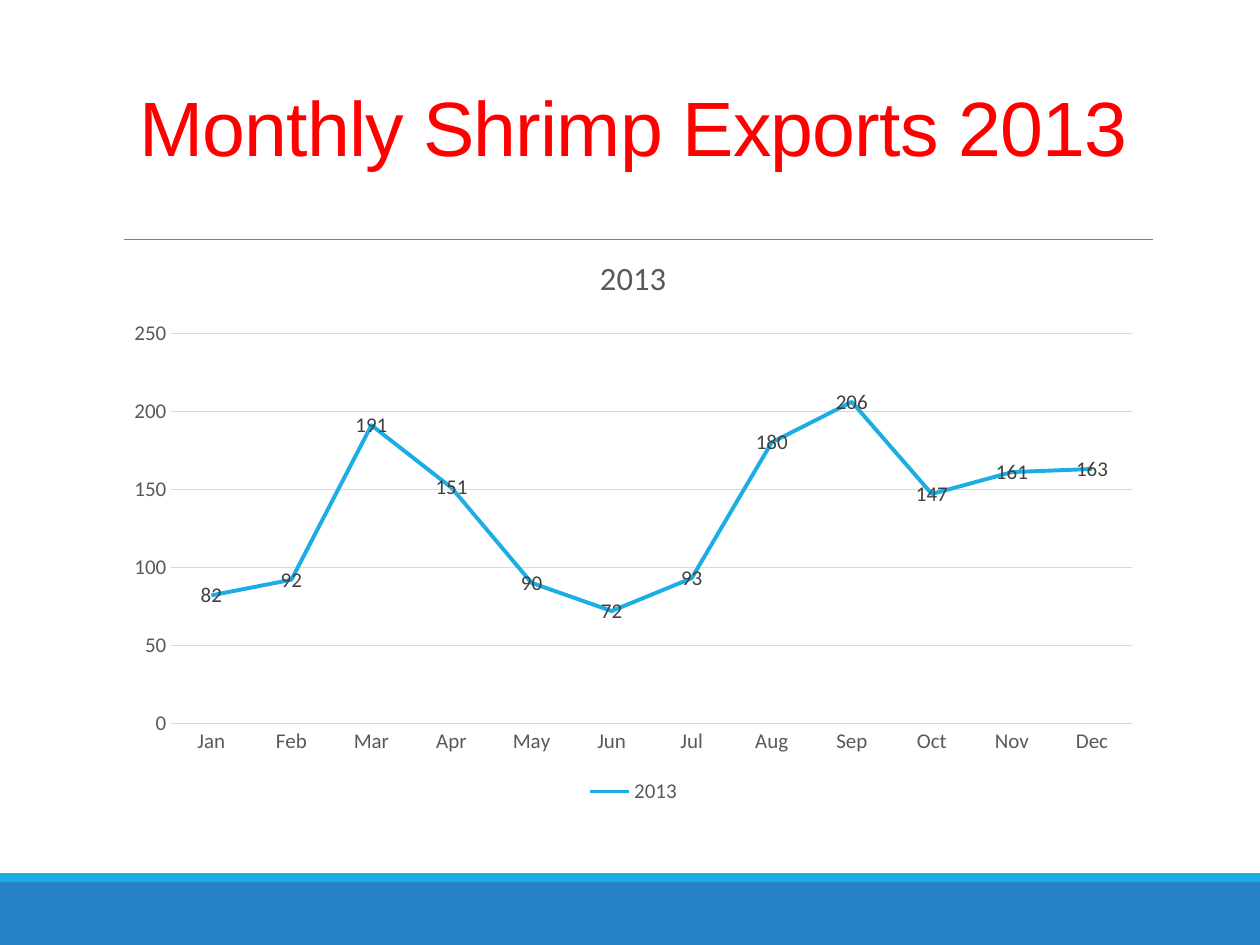
from pptx import Presentation
from pptx.chart.data import CategoryChartData
from pptx.dml.color import RGBColor
from pptx.enum.chart import (XL_CHART_TYPE, XL_LABEL_POSITION, XL_LEGEND_POSITION,
                             XL_MARKER_STYLE, XL_TICK_MARK)
from pptx.enum.shapes import MSO_CONNECTOR, MSO_SHAPE
from pptx.enum.text import MSO_ANCHOR, PP_ALIGN
from pptx.oxml.xmlchemy import OxmlElement
from pptx.util import Cm, Pt

LINE_CHART = XL_CHART_TYPE.LINE
LABEL_CENTER = XL_LABEL_POSITION.CENTER
LEGEND_BOTTOM = XL_LEGEND_POSITION.BOTTOM
NO_MARKER = XL_MARKER_STYLE.NONE
NO_TICK = XL_TICK_MARK.NONE
STRAIGHT = MSO_CONNECTOR.STRAIGHT
RECTANGLE = MSO_SHAPE.RECTANGLE
BOTTOM = MSO_ANCHOR.BOTTOM
CENTER = PP_ALIGN.CENTER

COLORS = {
    "band": "2683C6",
    "accent": "1CADE4",
    "rule": "808080",
    "title": "FF0000",
    "axis_text": "595959",
    "label_text": "404040",
    "grid": "D9D9D9",
}
MONTHS = ["Jan", "Feb", "Mar", "Apr", "May", "Jun",
          "Jul", "Aug", "Sep", "Oct", "Nov", "Dec"]
EXPORTS = [82, 92, 191, 151, 90, 72, 93, 180, 206, 147, 161, 163]


def color(key):
    return RGBColor.from_string(COLORS[key])


def style_font(font, size, key, name="Calibri"):
    font.size = Pt(size)
    font.name = name
    font.bold = False
    font.color.rgb = color(key)


def style_line(line, key, width):
    line.color.rgb = color(key)
    line.width = Pt(width)


def add_footer(slide, left, top, width, height):
    stripe_height = Cm(0.18)
    bands = [("accent", top, stripe_height),
             ("band", top + stripe_height, height - stripe_height)]
    for key, band_top, band_height in bands:
        band = slide.shapes.add_shape(RECTANGLE, left, band_top, width, band_height)
        band.shadow.inherit = False
        band.fill.solid()
        band.fill.fore_color.rgb = color(key)
        band.line.fill.background()


def add_heading(slide, left, top, width, height):
    rule_left, rule_top = left + Cm(0.2), top + height - Cm(0.31)
    rule = slide.shapes.add_connector(STRAIGHT, rule_left, rule_top,
                                      left + width, rule_top)
    style_line(rule.line, "rule", 0.5)
    rule._element.spPr.append(OxmlElement("a:effectLst"))

    heading = slide.shapes.add_textbox(left, top, width, height).text_frame
    heading.word_wrap = True
    heading.vertical_anchor = BOTTOM
    heading.margin_bottom = Cm(1.65)
    paragraph = heading.paragraphs[0]
    paragraph.alignment = CENTER
    paragraph.line_spacing = 0.85
    style_font(paragraph.font, 44, "title", "Arial")
    run = paragraph.add_run()
    run.text = "Monthly Shrimp Exports 2013"
    run._r.get_or_add_rPr().set("spc", "-50")


def add_exports_chart(slide, left, top, width, height):
    data = CategoryChartData()
    data.categories = MONTHS
    data.add_series("2013", EXPORTS)
    chart = slide.shapes.add_chart(LINE_CHART, left, top, width, height, data).chart
    style_font(chart.font, 12, "axis_text")

    chart.has_title = True
    chart_title = chart.chart_title.text_frame
    chart_title.text = "2013"
    style_font(chart_title.paragraphs[0].font, 18.6, "axis_text")
    chart.chart_title.include_in_layout = False

    chart.has_legend = True
    chart.legend.position = LEGEND_BOTTOM
    chart.legend.include_in_layout = False
    style_font(chart.legend.font, 12, "axis_text")

    months, amounts = chart.category_axis, chart.value_axis
    for axis in (months, amounts):
        axis.major_tick_mark = NO_TICK
        axis.minor_tick_mark = NO_TICK
        style_font(axis.tick_labels.font, 12, "axis_text")
    style_line(months.format.line, "grid", 0.75)
    amounts.format.line.fill.background()
    amounts.minimum_scale, amounts.maximum_scale = 0, 250
    amounts.major_unit = 50
    style_line(amounts.major_gridlines.format.line, "grid", 0.75)

    plot = chart.plots[0]
    plot.vary_by_categories = False
    exports = plot.series[0]
    exports.smooth = False
    exports.marker.style = NO_MARKER
    style_line(exports.format.line, "accent", 2.25)
    labels = exports.data_labels
    labels.show_value = True
    labels.position = LABEL_CENTER
    style_font(labels.font, 12, "label_text")


def main():
    deck = Presentation()
    deck.slide_width, deck.slide_height = Cm(25.4), Cm(19.05)
    slide = deck.slides.add_slide(deck.slide_layouts[6])
    add_footer(slide, Cm(0), Cm(17.6), deck.slide_width, Cm(1.45))
    add_heading(slide, Cm(2.29), Cm(0.79), Cm(20.95), Cm(4.34))
    add_exports_chart(slide, Cm(2.29), Cm(4.65), Cm(20.95), Cm(11.66))
    deck.save("out.pptx")


if __name__ == "__main__":
    main()
